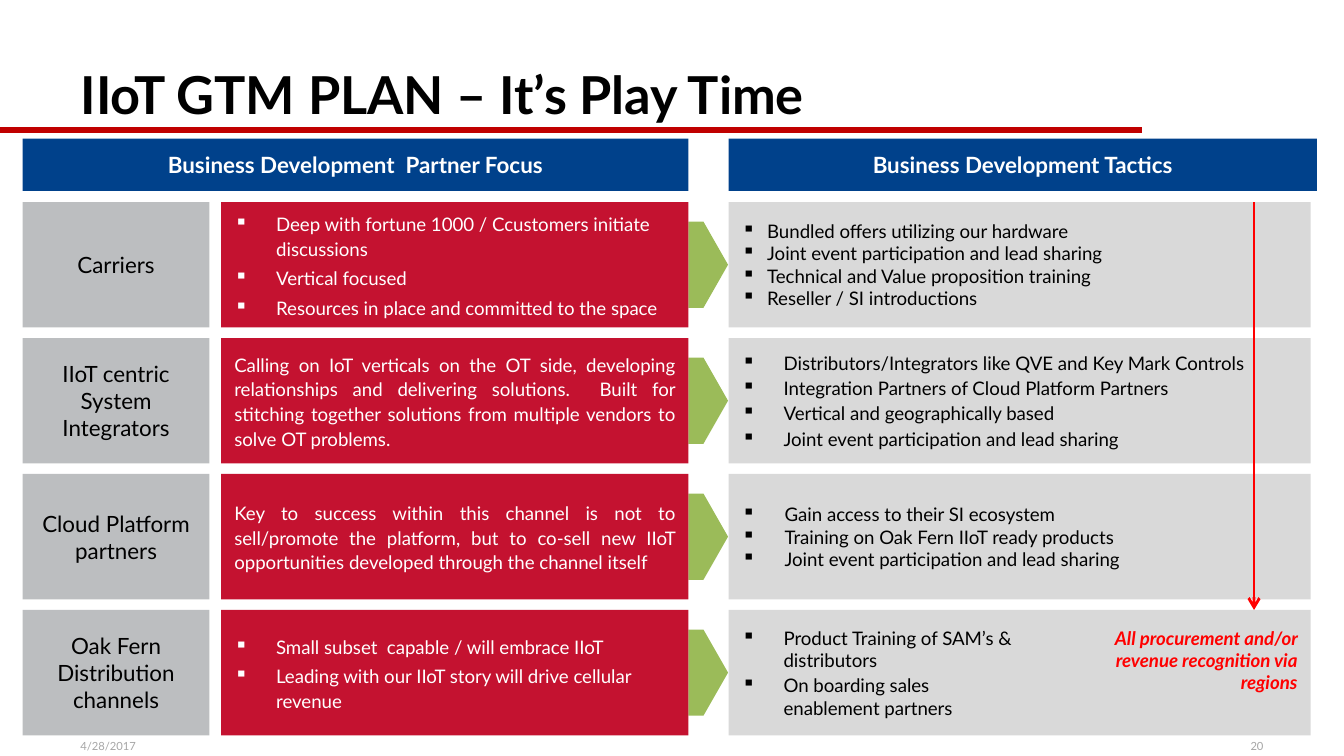
"""Build the IIoT go-to-market plan slide."""
from dataclasses import dataclass

from lxml.etree import SubElement
from pptx import Presentation
from pptx.dml.color import RGBColor
from pptx.enum.shapes import MSO_CONNECTOR, MSO_SHAPE
from pptx.enum.text import MSO_ANCHOR, MSO_AUTO_SIZE, PP_ALIGN
from pptx.oxml.ns import qn
from pptx.util import Cm, Pt


@dataclass(frozen=True)
class Theme:
    """Colours, font and type sizes of the slide."""
    font: str = "Lato"
    black: str = "000000"
    white: str = "FFFFFF"
    rule: str = "C00000"
    header: str = "00418B"
    partner: str = "BCBEC0"
    focus: str = "C41230"
    tactics: str = "D9D9D9"
    chevron: str = "9BBB59"
    accent: str = "FF0000"
    footer: str = "A6A6A6"
    title_size: int = 28
    label_size: int = 12
    body_size: int = 10
    footer_size: int = 6


@dataclass(frozen=True)
class TextStyle:
    """Paragraph settings shared by the lines of one cell."""
    size: int
    color: str
    align: PP_ALIGN = PP_ALIGN.LEFT
    bold: bool = False
    italic: bool = False
    hanging: float = 0
    margin: float = 0
    before: float = 0
    spacing: float = 1


@dataclass(frozen=True)
class PartnerRow:
    """One partner type with its focus and tactics."""
    partner: list
    focus: list
    focus_style: TextStyle
    tactics: list
    tactics_style: TextStyle


THEME = Theme()
TITLE = TextStyle(THEME.title_size, THEME.black, bold=True)
HEADER = TextStyle(THEME.label_size, THEME.white, PP_ALIGN.CENTER, bold=True)
PARTNER = TextStyle(THEME.label_size, THEME.black, PP_ALIGN.CENTER)
FOCUS_LIST = TextStyle(THEME.body_size, THEME.white, hanging=0.79, before=2.6, spacing=1.1)
FOCUS_PROSE = TextStyle(THEME.body_size, THEME.white, PP_ALIGN.JUSTIFY, spacing=1.1)
TIGHT_TACTICS = TextStyle(THEME.body_size, THEME.black, hanging=0.48)
CLOUD_TACTICS = TextStyle(THEME.body_size, THEME.black, hanging=0.81)
SPACED_TACTICS = TextStyle(THEME.body_size, THEME.black, hanging=0.79, before=1.5)
NOTE = TextStyle(THEME.body_size, THEME.accent, PP_ALIGN.RIGHT, bold=True, italic=True,
                 margin=1.27, before=1.5)

PARTNER_LEFT, PARTNER_WIDTH = 0.43, 3.53
FOCUS_LEFT, FOCUS_WIDTH = 4.18, 8.83
TACTICS_LEFT, TACTICS_WIDTH = 13.77, 11
HEADER_TOP, HEADER_HEIGHT = 2.62, 0.99
ROW_TOP, ROW_HEIGHT, ROW_PITCH = 3.82, 2.37, 2.57
CHEVRON_WIDTH, CHEVRON_HEIGHT = 0.75, 1.63

ROWS = [
    PartnerRow(
        ["Carriers"],
        ["Deep with fortune 1000 / Ccustomers initiate discussions", "Vertical focused",
         "Resources in place and committed to the space"], FOCUS_LIST,
        ["Bundled offers utilizing our hardware", "Joint event participation and lead sharing",
         "Technical and Value proposition training", "Reseller / SI introductions"],
        TIGHT_TACTICS),
    PartnerRow(
        ["IIoT centric System Integrators"],
        ["Calling on IoT verticals on the OT side, developing relationships and delivering "
         "solutions.  Built for stitching together solutions from multiple vendors to solve "
         "OT problems."], FOCUS_PROSE,
        ["Distributors/Integrators like QVE and Key Mark Controls",
         "Integration Partners of Cloud Platform Partners", "Vertical and geographically based",
         "Joint event participation and lead sharing"], SPACED_TACTICS),
    PartnerRow(
        ["Cloud Platform", "partners"],
        ["Key to success within this channel is not to sell/promote the platform, but to "
         "co-sell new IIoT opportunities developed through the channel itself"], FOCUS_PROSE,
        ["Gain access to their SI ecosystem", "Training on Oak Fern IIoT ready products",
         "Joint event participation and lead sharing"], CLOUD_TACTICS),
    PartnerRow(
        ["Oak Fern", "Distribution channels"],
        ["Small subset  capable / will embrace IIoT",
         "Leading with our IIoT story will drive cellular revenue"], FOCUS_LIST,
        ["Product Training of SAM’s & distributors", "On boarding sales enablement partners"],
        SPACED_TACTICS),
]


def format_paragraph(paragraph, style, first):
    """Apply a text style to one paragraph."""
    paragraph.alignment = style.align
    paragraph.line_spacing = style.spacing
    paragraph.space_before = Pt(0 if first else style.before)
    properties = paragraph._p.get_or_add_pPr()
    properties.set("marL", str(Cm(style.hanging or style.margin)))
    properties.set("indent", str(-Cm(style.hanging)))
    if style.hanging:
        SubElement(properties, qn("a:buChar")).set("char", "▪")
    font = paragraph.font
    font.name, font.size = THEME.font, Pt(style.size)
    font.bold, font.italic = style.bold, style.italic
    font.color.rgb = RGBColor.from_string(style.color)


def write_lines(frame, lines, style, anchor=MSO_ANCHOR.MIDDLE):
    """Fill a text frame with one paragraph per line."""
    frame.word_wrap = True
    frame.auto_size = MSO_AUTO_SIZE.NONE
    frame.vertical_anchor = anchor
    for index, line in enumerate(lines):
        paragraph = frame.add_paragraph() if index else frame.paragraphs[0]
        paragraph.text = line
        format_paragraph(paragraph, style, first=index == 0)


def add_block(slide, kind, left, top, width, height, color):
    """Add a plain filled shape."""
    block = slide.shapes.add_shape(kind, Cm(left), Cm(top), Cm(width), Cm(height))
    block.shadow.inherit = False
    block.fill.solid()
    block.fill.fore_color.rgb = RGBColor.from_string(color)
    block.line.fill.background()
    return block


def add_cell(slide, left, top, width, height, color, lines, style):
    """Add a filled rectangle with text and return its text frame."""
    cell = add_block(slide, MSO_SHAPE.RECTANGLE, left, top, width, height, color)
    write_lines(cell.text_frame, lines, style)
    return cell.text_frame


def add_line(slide, start, end, color, weight, arrow=False):
    """Add a straight line, with an open arrowhead if wanted."""
    line = slide.shapes.add_connector(MSO_CONNECTOR.STRAIGHT, *map(Cm, start + end))
    line.line.color.rgb = RGBColor.from_string(color)
    line.line.width = Pt(weight)
    if arrow:
        SubElement(line.line._get_or_add_ln(), qn("a:tailEnd")).set("type", "arrow")
    SubElement(line._element.spPr, qn("a:effectLst"))


def add_title(slide, text):
    """Place and format the title."""
    title = slide.shapes.title
    title.left, title.top, title.width, title.height = Cm(1.27), Cm(0.28), Cm(18.62), Cm(2.21)
    write_lines(title.text_frame, [text], TITLE, MSO_ANCHOR.BOTTOM)


def add_footer(slide, left, text, align):
    """Add a small text at the foot of the slide."""
    frame = slide.shapes.add_textbox(Cm(left), Cm(13.59), Cm(5.92), Cm(0.7)).text_frame
    frame.margin_bottom = Cm(0.07)
    write_lines(frame, [text], TextStyle(THEME.footer_size, THEME.footer, align),
                MSO_ANCHOR.BOTTOM)


def add_row(slide, top, row):
    """Add partner, focus, chevron and tactics, and return the tactics frame."""
    chevron = add_block(slide, MSO_SHAPE.PENTAGON, FOCUS_LEFT + FOCUS_WIDTH,
                        top + (ROW_HEIGHT - CHEVRON_HEIGHT) / 2,
                        CHEVRON_WIDTH, CHEVRON_HEIGHT, THEME.chevron)
    chevron.adjustments[0] = 0.62
    partner = add_cell(slide, PARTNER_LEFT, top, PARTNER_WIDTH, ROW_HEIGHT,
                       THEME.partner, row.partner, PARTNER)
    partner.margin_left = partner.margin_right = Cm(0.05)
    partner.margin_top = partner.margin_bottom = Cm(0.05)
    add_cell(slide, FOCUS_LEFT, top, FOCUS_WIDTH, ROW_HEIGHT,
             THEME.focus, row.focus, row.focus_style)
    return add_cell(slide, TACTICS_LEFT, top, TACTICS_WIDTH, ROW_HEIGHT,
                    THEME.tactics, row.tactics, row.tactics_style)


def add_side_note(frame, text):
    """Split a frame in two columns and put a note in the second."""
    frame._txBody.bodyPr.set("numCol", "2")
    note = frame.add_paragraph()
    note.text = text
    format_paragraph(note, NOTE, first=False)


def main():
    """Build and save the slide."""
    deck = Presentation()
    deck.slide_width, deck.slide_height = Cm(25.4), Cm(14.29)
    slide = deck.slides.add_slide(deck.slide_layouts[5])
    add_line(slide, (0, 2.46), (21.59, 2.46), THEME.rule, 3)
    add_title(slide, "IIoT GTM PLAN – It’s Play Time")
    add_footer(slide, 1.27, "4/28/2017", PP_ALIGN.LEFT)
    add_footer(slide, 18.21, "20", PP_ALIGN.RIGHT)
    for left, width, heading in ((PARTNER_LEFT, 12.58, "Business Development  Partner Focus"),
                                 (TACTICS_LEFT, 11.12, "Business Development Tactics")):
        add_cell(slide, left, HEADER_TOP, width, HEADER_HEIGHT, THEME.header, [heading], HEADER)
    for index, row in enumerate(ROWS):
        tactics = add_row(slide, ROW_TOP + index * ROW_PITCH, row)
    add_side_note(tactics, "All procurement and/or revenue recognition via regions")
    add_line(slide, (23.7, ROW_TOP), (23.7, ROW_TOP + 3 * ROW_PITCH), THEME.accent, 1.5,
             arrow=True)
    deck.save("out.pptx")


if __name__ == "__main__":
    main()
